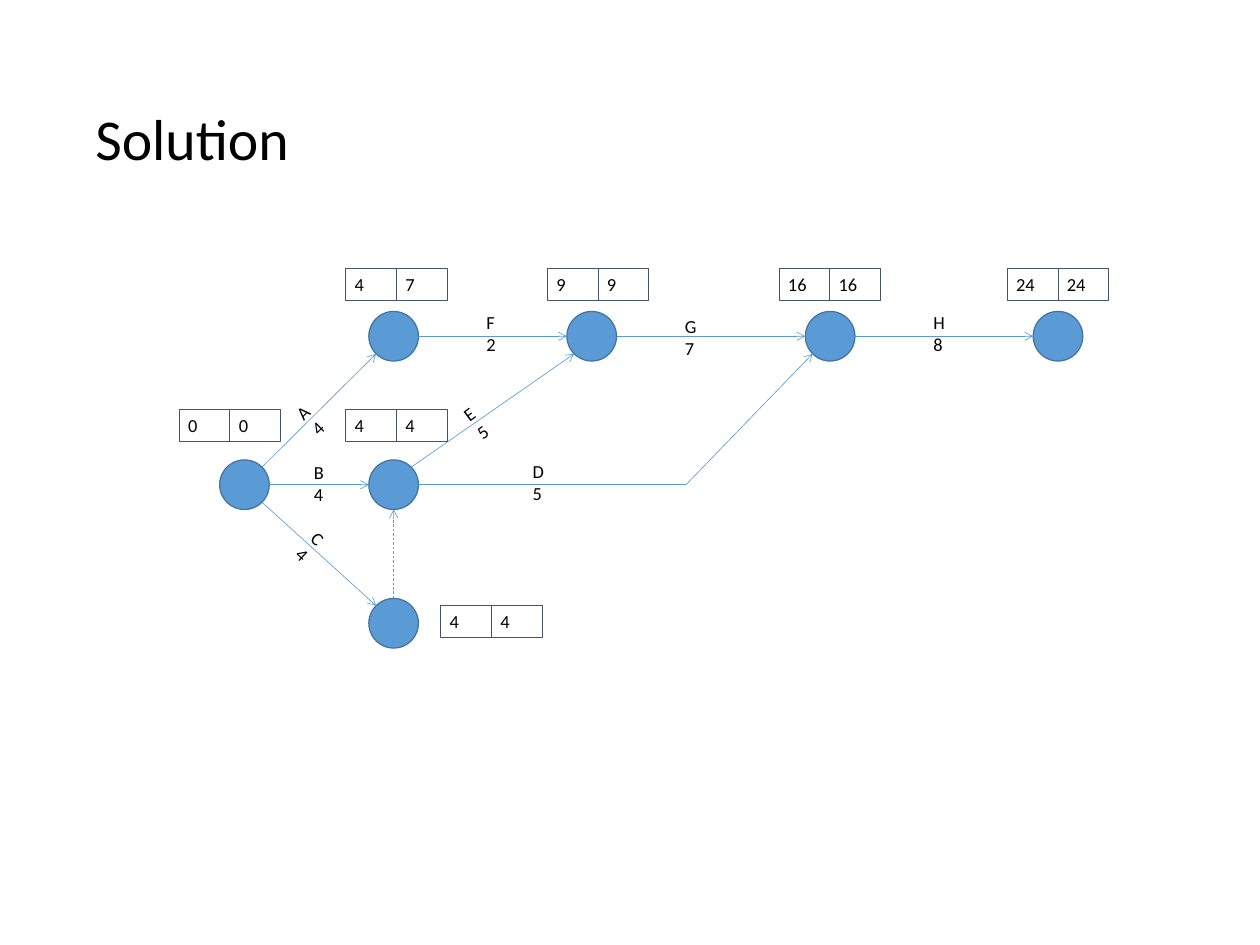
"""Builds a slide with an activity-on-arrow network and its earliest and latest event times."""
import math

from lxml import etree
from pptx import Presentation
from pptx import util as u
from pptx.dml.color import RGBColor
from pptx.enum import dml, shapes, text
from pptx.oxml.ns import qn

COLOURS = {
    "node": "5B9BD5",
    "node_edge": "43739E",
    "arrow": "5B9BD5",
    "time_edge": "44546A",
    "text": "000000",
}
NODE_SIZE = 1.4
TIME_WIDTH, TIME_HEIGHT = 1.43, 0.9
LABEL_WIDTH, LABEL_HEIGHT = 1.96, 1.52

UPPER, MIDDLE, LOWER = 9.49, 13.68, 17.59
NODES = {
    "start": (6.9, MIDDLE),
    "after_a": (11.11, UPPER),
    "after_c": (11.11, LOWER),
    "after_b": (11.11, MIDDLE),
    "after_f": (16.7, UPPER),
    "after_g": (23.43, UPPER),
    "end": (29.86, UPPER),
}
BEND = (19.36, MIDDLE)

EAST, WEST, NORTH, SOUTH = (1, 0), (-1, 0), (0, -1), (0, 1)
NORTH_EAST, SOUTH_EAST = (1, -1), (1, 1)
NORTH_WEST, SOUTH_WEST = (-1, -1), (-1, 1)

ACTIVITIES = [
    ("start", NORTH_EAST, "after_a", SOUTH_WEST),
    ("start", EAST, "after_b", WEST),
    ("start", SOUTH_EAST, "after_c", NORTH_WEST),
    ("after_a", EAST, "after_f", WEST),
    ("after_f", EAST, "after_g", WEST),
    ("after_g", EAST, "end", WEST),
    ("after_b", NORTH_EAST, "after_f", SOUTH_WEST),
]
LABELS = [
    ("B", 4, 8.61, 12.88, 0),
    ("A", 4, 8.2, 10.7, 316),
    ("C", 4, 8.2, 15.08, 43.3),
    ("F", 2, 13.48, 8.66, 0),
    ("D", 5, 14.78, 12.86, 0),
    ("G", 7, 19.08, 8.78, 0),
    ("H", 8, 26.09, 8.66, 0),
    ("E", 5, 12.93, 10.83, 323.3),
]
TIMES = [
    (0, 0, 5.06, 11.55),
    (4, 7, 9.76, 7.59),
    (9, 9, 15.45, 7.59),
    (16, 16, 21.99, 7.59),
    (24, 24, 28.43, 7.59),
    (4, 4, 9.76, 11.55),
    (4, 4, 12.44, 17.1),
]


def rim(node, direction):
    """Return the point on a node's rim in the given direction."""
    x, y = NODES[node]
    dx, dy = direction
    scale = NODE_SIZE / 2 / math.hypot(dx, dy)
    return x + dx * scale, y + dy * scale


class NetworkSlide:
    """Holds the style and the current slide."""

    font = "Calibri"
    title_size = 46.2
    text_size = 14.7

    def __init__(self, slide):
        self.slide = slide

    def colour(self, name):
        return RGBColor.from_string(COLOURS[name])

    def set_text(self, shape, content, size):
        frame = shape.text_frame
        frame.text = content
        frame.word_wrap = True
        for paragraph in frame.paragraphs:
            paragraph.alignment = text.PP_ALIGN.LEFT
            for run in paragraph.runs:
                run.font.name = self.font
                run.font.size = u.Pt(size)
                run.font.color.rgb = self.colour("text")
        return frame

    def outline(self, shape, name, width):
        shape.line.color.rgb = self.colour(name)
        shape.line.width = u.Pt(width)

    def title(self, content, x, y, width, height):
        box = self.slide.shapes.add_textbox(u.Cm(x), u.Cm(y), u.Cm(width), u.Cm(height))
        frame = self.set_text(box, content, self.title_size)
        frame.vertical_anchor = text.MSO_ANCHOR.MIDDLE
        frame.paragraphs[0].line_spacing = 0.9

    def node(self, x, y):
        circle = self.slide.shapes.add_shape(
            shapes.MSO_SHAPE.OVAL, u.Cm(x - NODE_SIZE / 2), u.Cm(y - NODE_SIZE / 2),
            u.Cm(NODE_SIZE), u.Cm(NODE_SIZE))
        circle.shadow.inherit = False
        circle.fill.solid()
        circle.fill.fore_color.rgb = self.colour("node")
        self.outline(circle, "node_edge", 1)

    def line(self, start, end, head=True, dashed=False):
        connector = self.slide.shapes.add_connector(
            shapes.MSO_CONNECTOR.STRAIGHT, *(u.Cm(value) for value in (*start, *end)))
        self.outline(connector, "arrow", 0.5)
        if dashed:
            connector.line.dash_style = dml.MSO_LINE.DASH
        properties = connector.element.spPr
        if head:
            etree.SubElement(properties.find(qn("a:ln")), qn("a:tailEnd"), type="arrow")
        etree.SubElement(properties, qn("a:effectLst"))

    def label(self, activity, duration, x, y, rotation):
        box = self.slide.shapes.add_textbox(
            u.Cm(x), u.Cm(y), u.Cm(LABEL_WIDTH), u.Cm(LABEL_HEIGHT))
        box.rotation = rotation
        frame = self.set_text(box, f"{activity}\n{duration}", self.text_size)
        frame.auto_size = text.MSO_AUTO_SIZE.SHAPE_TO_FIT_TEXT

    def times(self, earliest, latest, x, y):
        for column, value in enumerate((earliest, latest)):
            box = self.slide.shapes.add_shape(
                shapes.MSO_SHAPE.RECTANGLE, u.Cm(x + column * TIME_WIDTH), u.Cm(y),
                u.Cm(TIME_WIDTH), u.Cm(TIME_HEIGHT))
            box.shadow.inherit = False
            box.fill.background()
            self.outline(box, "time_edge", 0.75)
            frame = self.set_text(box, str(value), self.text_size)
            frame.vertical_anchor = text.MSO_ANCHOR.TOP
            frame.auto_size = text.MSO_AUTO_SIZE.SHAPE_TO_FIT_TEXT


def main():
    presentation = Presentation()
    presentation.slide_width = u.Cm(35.56)
    presentation.slide_height = u.Cm(26.67)
    network = NetworkSlide(presentation.slides.add_slide(presentation.slide_layouts[6]))

    network.title("Solution", 2.44, 1.42, 30.66, 5.16)
    for centre in NODES.values():
        network.node(*centre)
    for source, leaving, target, entering in ACTIVITIES:
        network.line(rim(source, leaving), rim(target, entering))
    network.line(rim("after_c", NORTH), rim("after_b", SOUTH), dashed=True)
    network.line(rim("after_b", EAST), BEND, head=False)
    network.line(BEND, rim("after_g", SOUTH_WEST))
    for label in LABELS:
        network.label(*label)
    for pair in TIMES:
        network.times(*pair)

    presentation.save("out.pptx")


if __name__ == "__main__":
    main()
